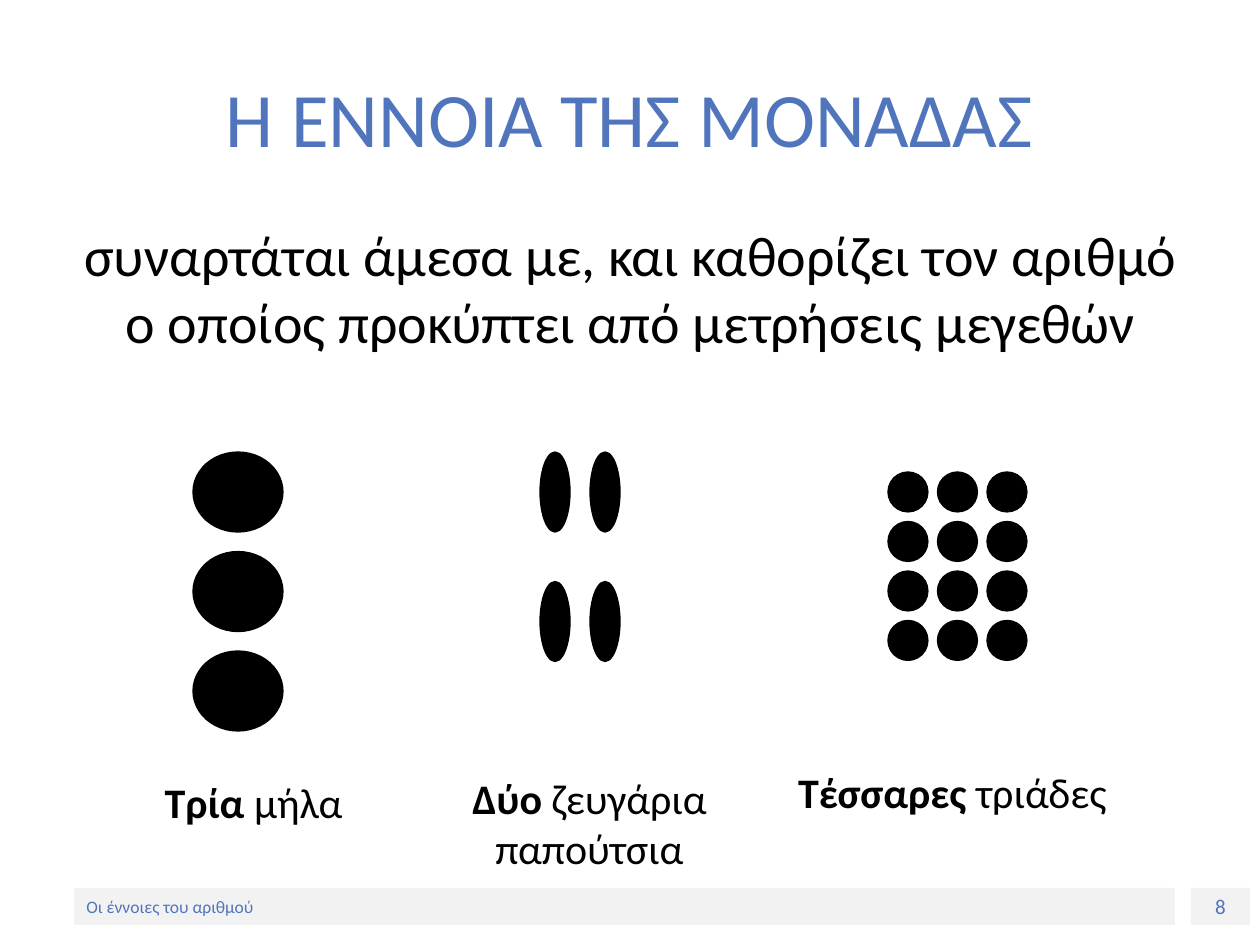
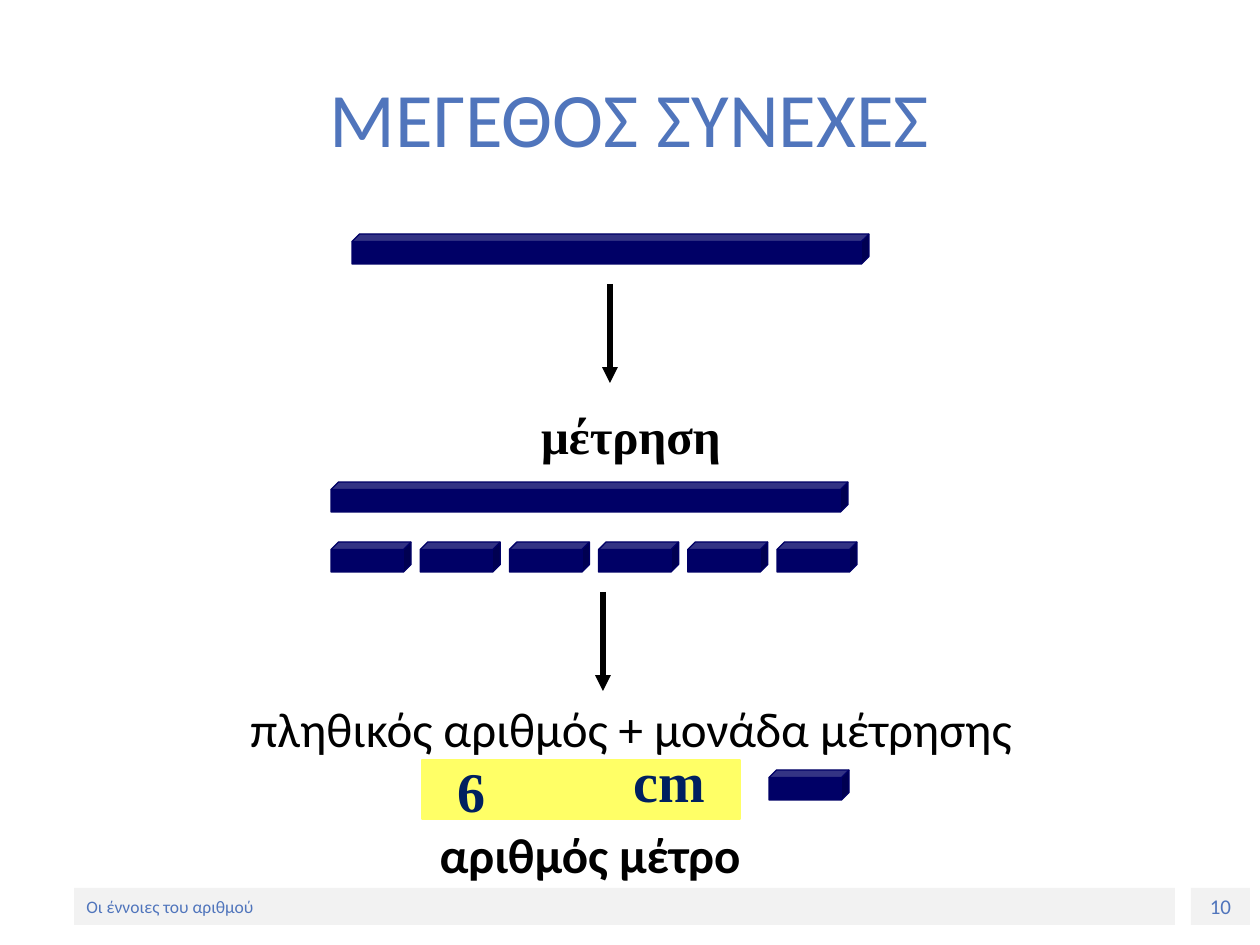
from collections import namedtuple

from lxml import etree
from pptx import Presentation
from pptx.dml.color import RGBColor
from pptx.enum.shapes import MSO_CONNECTOR, MSO_SHAPE
from pptx.enum.text import MSO_ANCHOR, MSO_AUTO_SIZE, PP_ALIGN
from pptx.oxml.ns import qn
from pptx.util import Pt

EMU_PER_PX = 914400 / 126
OVAL, CUBE, RECTANGLE = MSO_SHAPE.OVAL, MSO_SHAPE.CUBE, MSO_SHAPE.RECTANGLE
STRAIGHT = MSO_CONNECTOR.STRAIGHT
TOP, MIDDLE = MSO_ANCHOR.TOP, MSO_ANCHOR.MIDDLE
LEFT, CENTER = PP_ALIGN.LEFT, PP_ALIGN.CENTER
NO_AUTO_SIZE = MSO_AUTO_SIZE.NONE

BLUE = RGBColor(0x50, 0x75, 0xBC)
BLACK = RGBColor(0, 0, 0)
NAVY = RGBColor(0, 0, 0x66)
DARK_BLUE = RGBColor(0, 0x20, 0x60)
YELLOW = RGBColor(0xFF, 0xFF, 0x66)
PALE_GRAY = RGBColor(0xF2, 0xF2, 0xF2)
SANS, SERIF = "Calibri", "Times New Roman"
FOOTER_TEXT = "Οι έννοιες του αριθμού"

Box = namedtuple("Box", "left top width height")
Grid = namedtuple("Grid", "columns rows pitch_x pitch_y")
Run = namedtuple("Run", "text size color font bold", defaults=(BLACK, SANS, False))

TITLE_BOX = Box(63, 38, 1134, 158)
FOOTER_BOX = Box(74, 888, 1176, 37)
BAR_WIDTH, UNIT_WIDTH, BAR_HEIGHT = 517, 80, 30


def px(length):
    """Turn pixels into EMU."""
    return round(length * EMU_PER_PX)


def offset(box, left, top, width, height):
    """Return a box placed relative to the corner of another."""
    return Box(box.left + left, box.top + top, width, height)


def place(shape, box):
    """Move and size a shape to a box."""
    shape.left, shape.top, shape.width, shape.height = map(px, box)


def write(paragraph, runs, alignment=CENTER):
    """Add formatted runs to a paragraph."""
    paragraph.alignment = alignment
    paragraph.space_before = Pt(0)
    for item in runs:
        run = paragraph.add_run()
        run.text = item.text
        run.font.size = Pt(item.size)
        run.font.name = item.font
        run.font.bold = item.bold
        run.font.color.rgb = item.color


def add_text(slide, box, runs):
    """Add a wrapped, centred text box."""
    frame = slide.shapes.add_textbox(*map(px, box)).text_frame
    frame.word_wrap = True
    write(frame.paragraphs[0], runs)


def add_solid(slide, kind, box, color, outlined=True):
    """Add a preset shape of one colour."""
    shape = slide.shapes.add_shape(kind, *map(px, box))
    shape.shadow.inherit = False
    shape.fill.solid()
    shape.fill.fore_color.rgb = color
    if outlined:
        shape.line.color.rgb = color
        shape.line.width = Pt(0.75)
    else:
        shape.line.fill.background()
    return shape


def add_grid(slide, kind, first, grid, color):
    """Repeat a shape over rows and columns from the first box."""
    for row in range(grid.rows):
        for column in range(grid.columns):
            cell = offset(first, column * grid.pitch_x, row * grid.pitch_y,
                          first.width, first.height)
            add_solid(slide, kind, cell, color)


def add_arrow(slide, box):
    """Add a downward arrow along the left edge of a box."""
    arrow = slide.shapes.add_connector(
        STRAIGHT, px(box.left), px(box.top), px(box.left), px(box.top + box.height))
    arrow.line.color.rgb = BLACK
    arrow.line.width = Pt(3)
    line = arrow._element.spPr.find(qn("a:ln"))
    etree.SubElement(line, qn("a:tailEnd"), type="triangle")
    etree.SubElement(arrow._element.spPr, qn("a:effectLst"))


def add_footer(slide, box, number):
    """Add the footer band and the page number."""
    bands = (
        (offset(box, 0, 0, 1101, box.height), Run(FOOTER_TEXT, 10, BLUE), LEFT),
        (offset(box, 1117, 0, 59, box.height), Run(str(number), 12, BLUE), CENTER),
    )
    for band_box, run, alignment in bands:
        band = add_solid(slide, RECTANGLE, band_box, PALE_GRAY, outlined=False)
        band.text_frame.vertical_anchor = MIDDLE
        write(band.text_frame.paragraphs[0], [run], alignment)


def fill_body(slide, box, runs, gap=0):
    """Fill the body placeholder with one unbulleted paragraph per run."""
    body = slide.placeholders[1]
    place(body, box)
    frame = body.text_frame
    frame.auto_size = NO_AUTO_SIZE
    frame.vertical_anchor = TOP
    for index, run in enumerate(runs):
        paragraph = frame.add_paragraph() if index else frame.paragraphs[0]
        write(paragraph, [run])
        paragraph.space_before = Pt(gap if index else 0)
        properties = paragraph._p.get_or_add_pPr()
        properties.set("marL", "0")
        properties.set("indent", "0")
        etree.SubElement(properties, qn("a:buNone"))


def add_slide(presentation, title, number):
    """Add a slide with its title and footer."""
    slide = presentation.slides.add_slide(presentation.slide_layouts[1])
    place(slide.shapes.title, TITLE_BOX)
    frame = slide.shapes.title.text_frame
    frame.auto_size = NO_AUTO_SIZE
    frame.vertical_anchor = MIDDLE
    write(frame.paragraphs[0], [Run(title, 44, BLUE)])
    add_footer(slide, FOOTER_BOX, number)
    return slide


def add_count_panel(slide, box, item, grid, label_top, count, noun):
    """Show counted items above their label."""
    first = offset(box, *item)
    add_grid(slide, OVAL, first, grid, BLACK)
    label = offset(box, 0, label_top, box.width, box.height - label_top)
    add_text(slide, label, [Run(count, 24, bold=True), Run(noun, 24)])


def add_measurement(slide, box):
    """Show a bar, its division into units and the arrows between steps."""
    for left, top in ((21, 0), (0, 248)):
        add_solid(slide, CUBE, offset(box, left, top, BAR_WIDTH, BAR_HEIGHT), NAVY)
    first = offset(box, 0, 308, UNIT_WIDTH, BAR_HEIGHT)
    add_grid(slide, CUBE, first, Grid(6, 1, 89.2, 0), NAVY)
    for left, top in ((279, 50), (272, 358)):
        add_arrow(slide, offset(box, left, top, 0, 99))


def add_result(slide, box):
    """Show the number and the unit that the measurement gives."""
    add_solid(slide, RECTANGLE, offset(box, 60, 20, 318, 59), YELLOW)
    add_solid(slide, CUBE, offset(box, 407, 30, UNIT_WIDTH, BAR_HEIGHT), NAVY)
    add_text(slide, offset(box, 0, 78, 456, 72), [Run("αριθμός μέτρο", 28, bold=True)])
    for text, left, top, width in (("6", 70, 10, 79), ("cm", 238, 0, 139)):
        add_text(slide, offset(box, left, top, width, 79),
                 [Run(text, 32, DARK_BLUE, SERIF, True)])


def build_unit_slide(presentation):
    """Build the slide on the concept of the unit."""
    slide = add_slide(presentation, "Η ΕΝΝΟΙΑ ΤΗΣ ΜΟΝΑΔΑΣ", 8)
    fill_body(slide, Box(64, 214, 1134, 669), [
        Run("συναρτάται άμεσα με, και καθορίζει τον αριθμό ο οποίος "
            "προκύπτει από μετρήσεις μεγεθών", 32)])
    add_count_panel(slide, Box(105, 452, 297, 381), (88, 0, 90, 80),
                    Grid(1, 3, 0, 99.5), 318, "Τρία", " μήλα")
    add_count_panel(slide, Box(441, 452, 297, 429), (99, 0, 30, 80),
                    Grid(2, 2, 50, 129.5), 314, "Δύο", " ζευγάρια παπούτσια")
    add_count_panel(slide, Box(769, 452, 367, 371), (119, 20, 40, 40),
                    Grid(3, 4, 49.5, 49.5), 308, "Τέσσαρες ", "τριάδες")


def build_continuous_slide(presentation):
    """Build the slide on continuous magnitude."""
    slide = add_slide(presentation, "ΜΕΓΕΘΟΣ ΣΥΝΕΧΕΣ", 10)
    fill_body(slide, Box(64, 399, 1134, 489), [
        Run("μέτρηση", 28, font=SERIF, bold=True),
        Run("πληθικός αριθμός + μονάδα μέτρησης", 28)], gap=134)
    add_measurement(slide, Box(331, 234, 539, 457))
    add_result(slide, Box(362, 740, 486, 150))


def main():
    """Build and save the presentation."""
    presentation = Presentation()
    presentation.slide_width, presentation.slide_height = px(1260), px(945)
    build_unit_slide(presentation)
    build_continuous_slide(presentation)
    presentation.save("out.pptx")


if __name__ == "__main__":
    main()
